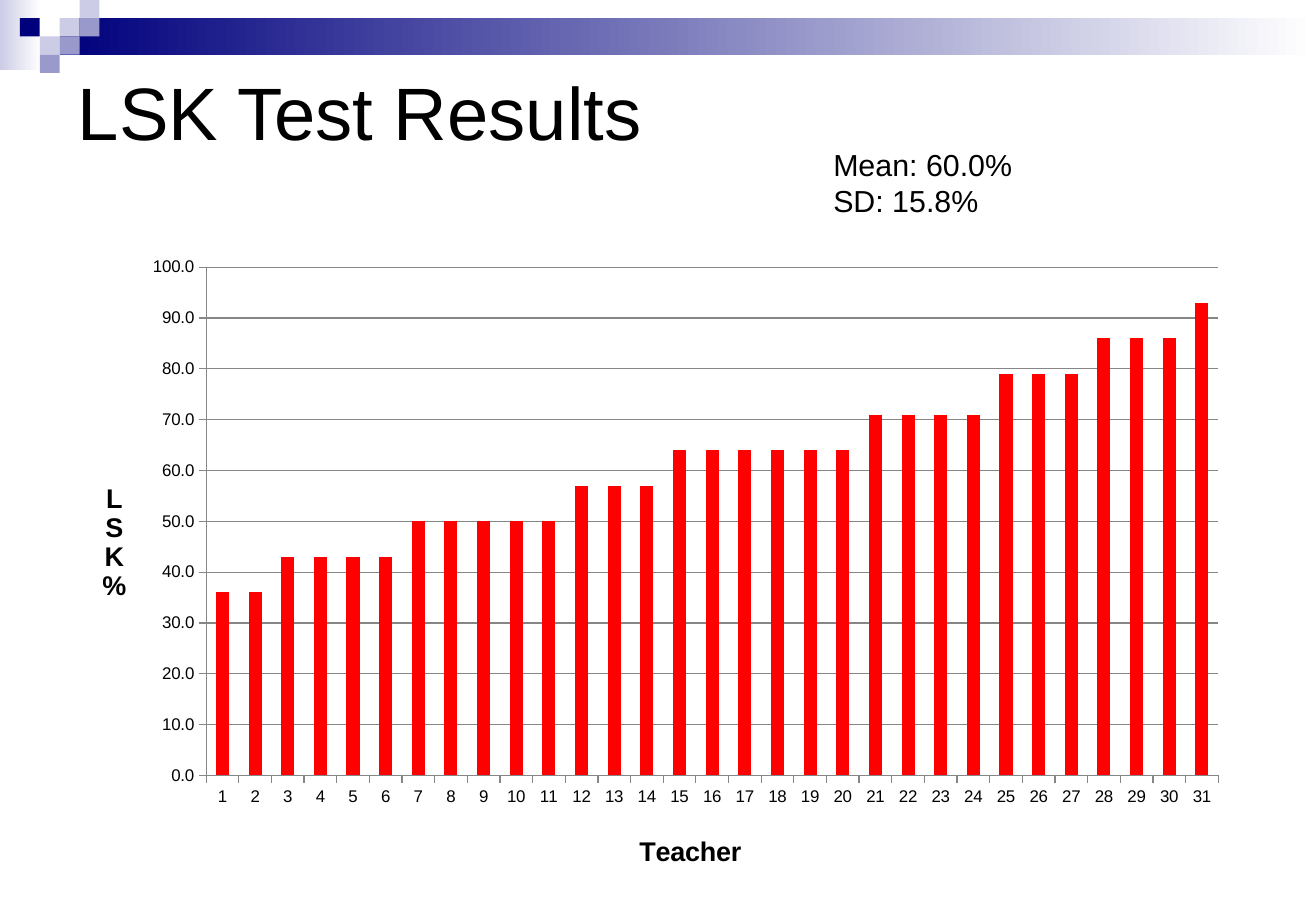
from lxml import etree
from pptx import Presentation
from pptx.chart.data import CategoryChartData
from pptx.dml.color import RGBColor
from pptx.enum.chart import XL_CHART_TYPE as CT, XL_TICK_MARK as TICK
from pptx.enum.shapes import MSO_SHAPE as SHAPE
from pptx.enum.text import MSO_ANCHOR as ANCHOR
from pptx.oxml.ns import qn
from pptx.util import Pt

C = {"navy": "00007D", "mid": "9999CC", "pale": "CCCCE6", "white": "FFFFFF",
     "text": "000000", "bar": "FF0000", "axis": "868686"}
FONT = "Arial"
WIDTH, HEIGHT = 780, 540
# Score in percent and number of teachers who reached it
SCORES = [(36, 2), (43, 4), (50, 5), (57, 3), (64, 6),
          (71, 4), (79, 3), (86, 3), (93, 1)]


def rgb(name):
    return RGBColor.from_string(C[name])


def style(font, size, bold=False):
    font.name, font.size, font.bold = FONT, Pt(size), bold
    font.color.rgb = rgb("text")


def add_rect(s, x, y, w, h, color, fade_to=None):
    sp = s.shapes.add_shape(SHAPE.RECTANGLE, Pt(x), Pt(y), Pt(w), Pt(h))
    sp.shadow.inherit = False
    sp.line.fill.background()
    if fade_to:
        sp.fill.gradient()
        sp.fill.gradient_angle = 0
        for stop, name in zip(sp.fill.gradient_stops, (color, fade_to)):
            stop.color.rgb = rgb(name)
    else:
        sp.fill.solid()
        sp.fill.fore_color.rgb = rgb(color)


def add_banner(s, x, y, w):
    cw, ch = 11.8, 10.8
    add_rect(s, x, y, 24.5, 41.8, "pale", "white")
    add_rect(s, x + 3 * cw, y + ch, w - 3 * cw, 2 * ch, "navy", "white")
    # Checker squares: column, row, colour
    for col, row, color in [(3, 1, "pale"), (4, 0, "pale"), (4, 1, "mid"),
                            (2, 2, "pale"), (1, 1, "navy"), (3, 2, "mid"),
                            (2, 3, "mid")]:
        add_rect(s, x + col * cw, y + row * ch, cw, ch, color)


def add_text(s, x, y, w, h, lines, size):
    tf = s.shapes.add_textbox(Pt(x), Pt(y), Pt(w), Pt(h)).text_frame
    tf.word_wrap = True
    tf.vertical_anchor = ANCHOR.TOP
    tf.text = "\n".join(lines)
    for p in tf.paragraphs:
        style(p.runs[0].font, size)


def set_layout(parent, index, **values):
    """Place a chart part by fractions of the chart area."""
    for old in parent.findall(qn("c:layout")):
        parent.remove(old)
    layout = etree.Element(qn("c:layout"))
    manual = etree.SubElement(layout, qn("c:manualLayout"))
    for tag, value in values.items():
        etree.SubElement(manual, qn("c:" + tag)).set("val", str(value))
    parent.insert(index, layout)


def add_axis_title(axis, text, x, y):
    tf = axis.axis_title.text_frame
    tf.text = text
    style(tf.paragraphs[0].runs[0].font, 16, bold=True)
    set_layout(axis.axis_title._element, 1, xMode="edge", yMode="edge", x=x, y=y)
    return tf


def add_score_chart(s, x, y, w, h):
    values = [score for score, count in SCORES for _ in range(count)]
    data = CategoryChartData()
    data.categories = [str(i) for i in range(1, len(values) + 1)]
    data.add_series("Series 1", values)
    chart = s.shapes.add_chart(CT.COLUMN_CLUSTERED, Pt(x), Pt(y), Pt(w), Pt(h),
                               data).chart
    chart.has_legend = chart.has_title = False
    style(chart.font, 10)

    # Bars
    plot = chart.plots[0]
    plot.gap_width = 150
    plot.vary_by_categories = False
    fill = plot.series[0].format.fill
    fill.solid()
    fill.fore_color.rgb = rgb("bar")

    # Axes and gridlines
    cat, val = chart.category_axis, chart.value_axis
    val.minimum_scale, val.maximum_scale, val.major_unit = 0, 100, 10
    val.has_major_gridlines = True
    val.tick_labels.number_format = "0.0"
    val.tick_labels.number_format_is_linked = False
    for part in (cat, val, val.major_gridlines):
        part.format.line.color.rgb = rgb("axis")
        part.format.line.width = Pt(0.75)
    for axis in (cat, val):
        axis.major_tick_mark = TICK.OUTSIDE

    # Titles and plot area
    add_axis_title(cat, "Teacher", 0.48, 0.91)
    tf = add_axis_title(val, "LSK%", 0.02, 0.36)
    body = tf._txBody.find(qn("a:bodyPr"))
    body.set("rot", "0")
    body.set("vert", "wordArtVert")
    plot_area = chart._chartSpace.find(".//" + qn("c:plotArea"))
    set_layout(plot_area, 0, layoutTarget="inner", xMode="edge", yMode="edge",
               x=0.113, y=0.034, w=0.867, h=0.793)


def main():
    prs = Presentation()
    prs.slide_width, prs.slide_height = Pt(WIDTH), Pt(HEIGHT)
    s = prs.slides.add_slide(prs.slide_layouts[6])
    add_banner(s, 0, 0, WIDTH)
    add_score_chart(s, 44, 145.5, 692, 380)
    add_text(s, 39, 36, 702, 108, ["LSK Test Results"], 44)
    add_text(s, 486.8, 83, 209.5, 51, ["Mean: 60.0%", "SD: 15.8%"], 18)
    prs.save("out.pptx")


if __name__ == "__main__":
    main()
